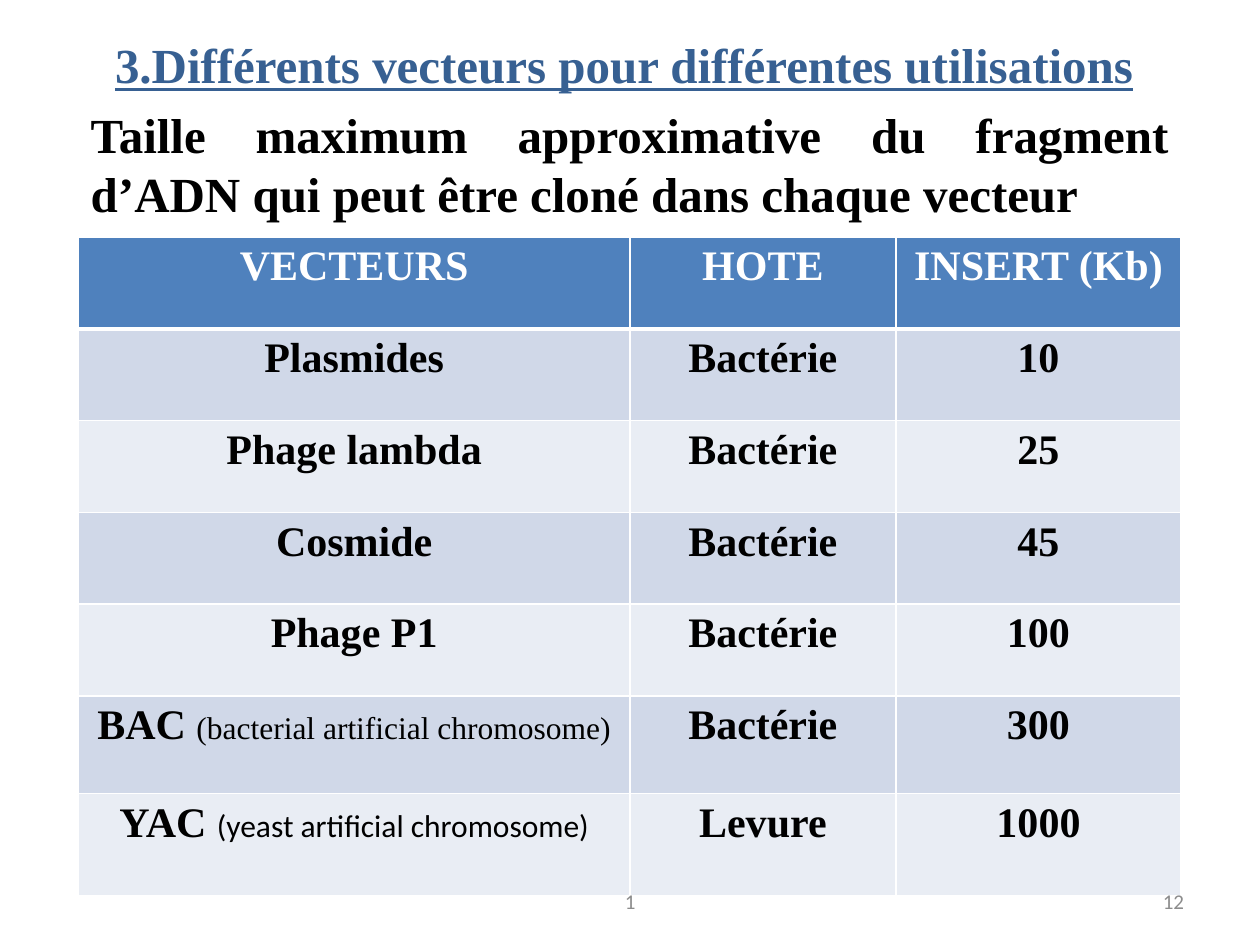
from lxml.etree import SubElement
from pptx import Presentation
from pptx.dml.color import RGBColor
from pptx.enum.text import MSO_ANCHOR, PP_ALIGN
from pptx.oxml.ns import qn
from pptx.util import Cm, Pt

WHITE = RGBColor(0xFF, 0xFF, 0xFF)
BLACK = RGBColor(0, 0, 0)
GREY = RGBColor(0x8C, 0x8C, 0x8C)
NAVY = RGBColor(0x37, 0x60, 0x92)
BLUE = RGBColor(0x4F, 0x81, 0xBD)
BANDS = [RGBColor(0xE9, 0xED, 0xF4), RGBColor(0xD0, 0xD8, 0xE8)]
SERIF, SANS = "Times New Roman", "Calibri"
WIDTHS = [11.12, 5.36, 5.75]
HEIGHTS = [1.85] * 5 + [1.97, 2.06]
ROWS = [
    ("VECTEURS", "HOTE", "INSERT (Kb)"),
    ("Plasmides", "Bactérie", "10"),
    ("Phage lambda", "Bactérie", "25"),
    ("Cosmide", "Bactérie", "45"),
    ("Phage P1", "Bactérie", "100"),
    ("BAC ", "Bactérie", "300"),
    ("YAC ", "Levure", "1000"),
]
NOTES = {
    "BAC ": ("(bacterial artificial chromosome)", SERIF),
    "YAC ": ("(yeast artificial chromosome)", SANS),
}


def style(font, size, color, name=SERIF, bold=True):
    font.size, font.name, font.bold = Pt(size), name, bold
    font.color.rgb = color


def add_text(slide, box, text, size, color, align, name=SERIF, bold=True):
    shape = slide.shapes.add_textbox(*map(Cm, box))
    shape.text_frame.word_wrap = True
    para = shape.text_frame.paragraphs[0]
    para.text, para.alignment = text, align
    style(para.font, size, color, name, bold)
    return shape


def add_page(slide, box, text, align):
    shape = add_text(slide, box, text, 12, GREY, align, SANS, False)
    shape.text_frame.vertical_anchor = MSO_ANCHOR.MIDDLE


def set_edges(cell, top, bottom):
    props = cell._tc.get_or_add_tcPr()
    for side, width in zip("LRTB", (1, 1, top, bottom)):
        line = SubElement(props, qn(f"a:ln{side}"), w=str(Pt(width)))
        fill = SubElement(line, qn("a:solidFill"))
        SubElement(fill, qn("a:srgbClr"), val=str(WHITE))


def fill_cell(cell, text, row):
    set_edges(cell, 3 if row == 1 else 1, 1 if row else 3)
    cell.fill.solid()
    cell.fill.fore_color.rgb = BANDS[row % 2] if row else BLUE
    para = cell.text_frame.paragraphs[0]
    para.text, para.alignment = text, PP_ALIGN.CENTER
    if text in NOTES:
        style(para.runs[0].font, 24, BLACK)
        note, name = NOTES[text]
        run = para.add_run()
        run.text = note
        style(run.font, 18, BLACK, name, False)
    else:
        style(para.font, 24, BLACK if row else WHITE)


def add_grid(slide):
    box = map(Cm, (1.58, 4.78, sum(WIDTHS), sum(HEIGHTS)))
    table = slide.shapes.add_table(len(ROWS), len(WIDTHS), *box).table
    for col, width in zip(table.columns, WIDTHS):
        col.width = Cm(width)
    for i, (texts, height) in enumerate(zip(ROWS, HEIGHTS)):
        table.rows[i].height = Cm(height)
        for j, text in enumerate(texts):
            fill_cell(table.cell(i, j), text, i)


def main():
    """Build the slide on cloning vectors and their insert sizes."""
    deck = Presentation()
    deck.slide_width, deck.slide_height = Cm(25.4), Cm(19.05)
    slide = deck.slides.add_slide(deck.slide_layouts[6])
    title = add_text(slide, (0.58, 0.58, 24, 1.45),
                     "3.Différents vecteurs pour différentes utilisations",
                     28, NAVY, PP_ALIGN.CENTER)
    title.text_frame.paragraphs[0].font.underline = True
    add_grid(slide)
    add_text(slide, (1.58, 1.98, 22.23, 2.64),
             "Taille maximum approximative du fragment d’ADN "
             "qui peut être cloné dans chaque vecteur",
             28, BLACK, PP_ALIGN.JUSTIFY)
    add_page(slide, (18.2, 17.65, 5.92, 1.02), "12", PP_ALIGN.RIGHT)
    add_page(slide, (8.68, 17.65, 8.05, 1.02), "1", PP_ALIGN.CENTER)
    deck.save("out.pptx")


if __name__ == "__main__":
    main()
